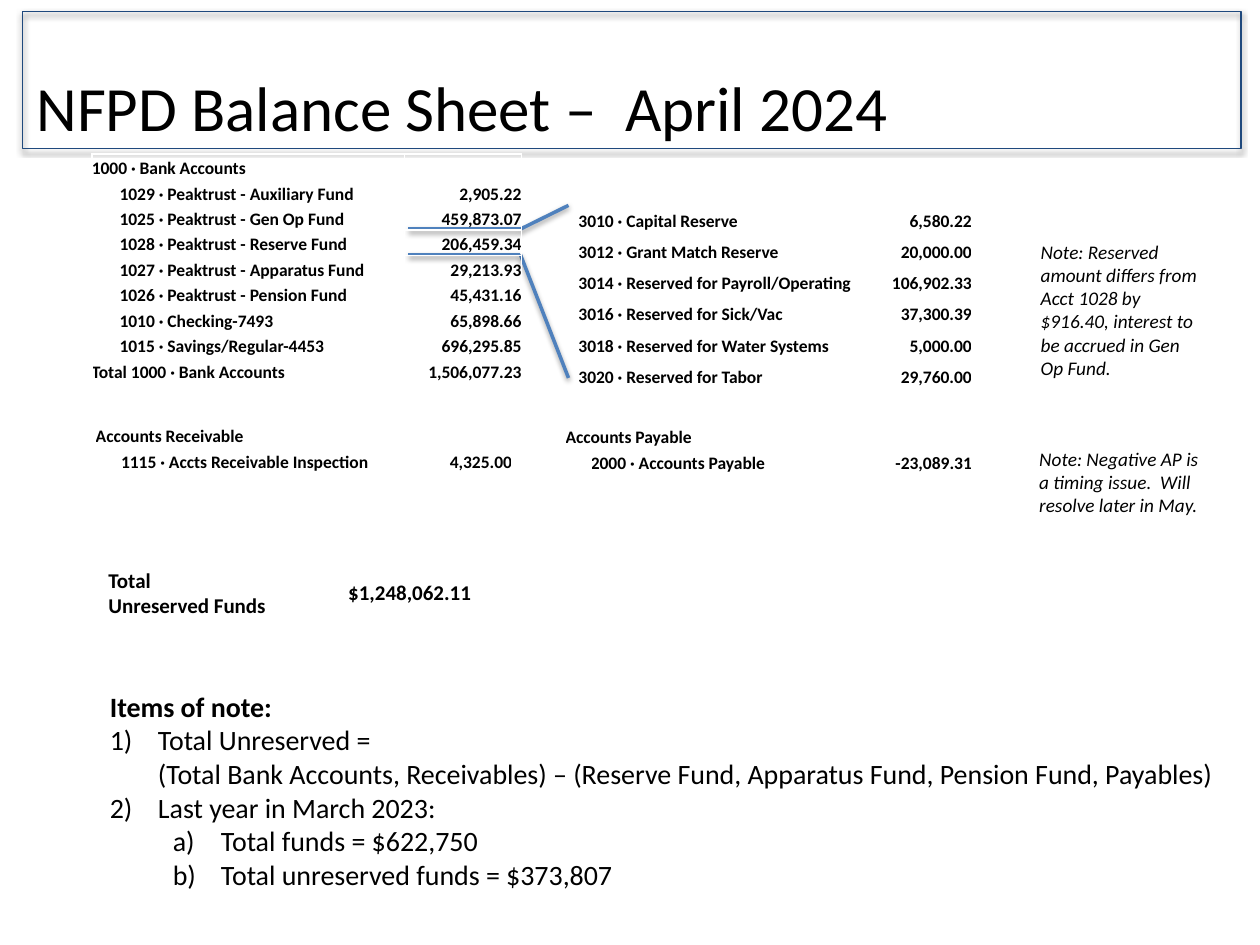
from dataclasses import dataclass

from lxml.etree import SubElement
from pptx import Presentation
from pptx.dml.color import RGBColor
from pptx.enum.shapes import MSO_CONNECTOR as Connector, MSO_SHAPE as Shape
from pptx.enum.text import MSO_ANCHOR as Anchor, MSO_AUTO_SIZE as AutoSize, PP_ALIGN as Align
from pptx.oxml.ns import qn
from pptx.util import Cm, Pt


@dataclass(frozen=True)
class Theme:
    """Colours, typeface and type sizes of the slide."""
    font: str = "Calibri"
    ink: str = "000000"
    frame: str = "1F497D"
    callout: str = "4F81BD"
    grid: str = "FFFFFF"
    title: int = 36
    items: int = 16
    total: int = 12
    note: int = 11
    ledger: int = 10


@dataclass(frozen=True)
class Box:
    """A region of the slide, in centimetres."""
    left: float
    top: float
    width: float
    height: float

    def place(self):
        """Return left, top, width and height as lengths."""
        return Cm(self.left), Cm(self.top), Cm(self.width), Cm(self.height)


THEME = Theme()

BANK_ACCOUNTS = [
    ("1000 · Bank Accounts", "", ""),
    ("", "1029 · Peaktrust - Auxiliary Fund", "2,905.22"),
    ("", "1025 · Peaktrust - Gen Op Fund", "459,873.07"),
    ("", "1028 · Peaktrust - Reserve Fund", "206,459.34"),
    ("", "1027 · Peaktrust - Apparatus Fund", "29,213.93"),
    ("", "1026 · Peaktrust - Pension Fund", "45,431.16"),
    ("", "1010 · Checking-7493", "65,898.66"),
    ("", "1015 · Savings/Regular-4453", "696,295.85"),
    ("Total 1000 · Bank Accounts", "", "1,506,077.23"),
]
RESERVES = [
    ("3010 · Capital Reserve", "6,580.22"),
    ("3012 · Grant Match Reserve", "20,000.00"),
    ("3014 · Reserved for Payroll/Operating", "106,902.33"),
    ("3016 · Reserved for Sick/Vac", "37,300.39"),
    ("3018 · Reserved for Water Systems", "5,000.00"),
    ("3020 · Reserved for Tabor", "29,760.00"),
]
RECEIVABLES = [
    ("Accounts Receivable", "", ""),
    ("", "1115 · Accts Receivable Inspection", "4,325.00"),
]
PAYABLES = [
    ("Accounts Payable", "", ""),
    ("", "2000 · Accounts Payable", "-23,089.31"),
]
UNRESERVED = [("Total \nUnreserved Funds", "$1,248,062.11")]
ITEMS = [
    (0, "Total Unreserved = \n(Total Bank Accounts, Receivables) – "
        "(Reserve Fund, Apparatus Fund, Pension Fund, Payables)"),
    (0, "Last year in March 2023:"),
    (1, "Total funds = $622,750"),
    (1, "Total unreserved funds = $373,807"),
]
NUMBERING = [("arabicParenR", 0.97), ("alphaLcParenR", 2.24)]


def write(paragraph, text, size, bold=False, italic=False):
    """Add text run by run, with a line break at each newline."""
    for index, line in enumerate(text.split("\n")):
        if index:
            paragraph.add_line_break()
        run = paragraph.add_run()
        run.text = line
        font = run.font
        font.name, font.size, font.bold, font.italic = THEME.font, Pt(size), bold, italic
        font.color.rgb = RGBColor.from_string(THEME.ink)


def outline(part, color, width, distance, opacity):
    """Give a part its line and a soft shadow straight below it."""
    part.line.color.rgb = RGBColor.from_string(color)
    part.line.width = Pt(width)
    effects = SubElement(part._element.spPr, qn("a:effectLst"))
    shadow = SubElement(effects, qn("a:outerShdw"), blurRad=str(Pt(3.1)),
                        dist=str(Pt(distance)), dir="5400000", rotWithShape="0")
    shade = SubElement(shadow, qn("a:srgbClr"), val=THEME.ink)
    SubElement(shade, qn("a:alpha"), val=str(opacity * 1000))


def heading(slide, box):
    """Draw the framed heading with the slide title at its foot."""
    frame = slide.shapes.add_shape(Shape.RECTANGLE, *box.place())
    frame.fill.background()
    outline(frame, THEME.frame, 0.75, 1.8, 100)
    title = slide.shapes.title
    title.left, title.top, title.width, title.height = Box(
        box.left + 0.02, box.top + 1.09, 22.86, 1.65).place()
    title.text_frame.vertical_anchor = Anchor.MIDDLE
    paragraph = title.text_frame.paragraphs[0]
    paragraph.alignment = Align.LEFT
    write(paragraph, "NFPD Balance Sheet –  April 2024", THEME.title)


def border(cell, bottom):
    """Draw the cell borders in the grid colour."""
    properties = cell._tc.get_or_add_tcPr()
    for side, width in (("L", 1), ("R", 1), ("T", 1), ("B", bottom)):
        edge = SubElement(properties, qn(f"a:ln{side}"), w=str(Pt(width)))
        fill = SubElement(edge, qn("a:solidFill"))
        SubElement(fill, qn("a:srgbClr"), val=THEME.grid)


def ledger(slide, box, columns, rows, size=THEME.ledger, anchor=Anchor.BOTTOM,
           padded=False, bottom=1):
    """Set out accounts and right-aligned amounts as a table."""
    table = slide.shapes.add_table(len(rows), len(columns), *box.place()).table
    table.first_row = table.horz_banding = False
    for column, width in zip(table.columns, columns):
        column.width = Cm(width)
    for r, entries in enumerate(rows):
        table.rows[r].height = Cm(box.height / len(rows))
        for c, entry in enumerate(entries):
            cell = table.cell(r, c)
            border(cell, bottom)
            cell.fill.background()
            cell.vertical_anchor = anchor
            if not padded:
                cell.margin_left = cell.margin_right = cell.margin_top = cell.margin_bottom = 0
            paragraph = cell.text_frame.paragraphs[0]
            if entry:
                write(paragraph, entry, size, bold=True)
            else:
                SubElement(paragraph._p, qn("a:endParaRPr"), sz=str(size * 100))
            if c == len(columns) - 1:
                paragraph.alignment = Align.RIGHT
        if len(columns) == 3 and entries[0]:
            table.cell(r, 0).merge(table.cell(r, 1))


def reserve_callout(slide, box):
    """Link the reserve fund amount to the list of its parts."""
    elbow, upper, lower = 2.26, 0.48, 0.99
    group = slide.shapes.add_group_shape()
    for x1, y1, x2, y2 in ((elbow, upper, box.width, 0),
                           (elbow, lower, box.width, box.height),
                           (0, upper, elbow, upper),
                           (0, lower, elbow, lower)):
        link = group.shapes.add_connector(
            Connector.STRAIGHT, Cm(box.left + x1), Cm(box.top + y1),
            Cm(box.left + x2), Cm(box.top + y2))
        outline(link, THEME.callout, 2, 1.6, 38)


def side_note(slide, box, text):
    """Write an italic remark beside the ledgers."""
    frame = slide.shapes.add_textbox(*box.place()).text_frame
    frame.word_wrap = True
    frame.auto_size = AutoSize.SHAPE_TO_FIT_TEXT
    write(frame.paragraphs[0], text, THEME.note, italic=True)


def items_of_note(slide, box):
    """Fill the body placeholder with the numbered items of note."""
    body = slide.placeholders[1]
    body.left, body.top, body.width, body.height = box.place()
    frame = body.text_frame
    frame.auto_size = AutoSize.SHAPE_TO_FIT_TEXT
    lead = frame.paragraphs[0]
    lead.space_before = Pt(0)
    properties = lead._p.get_or_add_pPr()
    properties.set("marL", "0")
    properties.set("indent", "0")
    SubElement(properties, qn("a:buNone"))
    write(lead, "Items of note:", THEME.items, bold=True)
    for level, text in ITEMS:
        scheme, indent = NUMBERING[level]
        item = frame.add_paragraph()
        item.level = level
        item.space_before = Pt(0)
        properties = item._p.get_or_add_pPr()
        properties.set("marL", str(Cm(indent)))
        properties.set("indent", str(-Cm(0.97)))
        SubElement(properties, qn("a:buFont"), typeface=THEME.font)
        SubElement(properties, qn("a:buAutoNum"), type=scheme)
        write(item, text, THEME.items)


def main():
    """Build the balance sheet slide and save it."""
    deck = Presentation()
    deck.slide_width, deck.slide_height = Cm(25.4), Cm(19.05)
    slide = deck.slides.add_slide(deck.slide_layouts[1])
    heading(slide, Box(0.46, 0.23, 24.56, 2.77))
    ledger(slide, Box(11.4, 8.51, 8.19, 1.04), (0.51, 5.44, 2.24), PAYABLES)
    ledger(slide, Box(11.66, 4.06, 7.93, 3.76), (5.77, 2.16), RESERVES)
    items_of_note(slide, Box(1.96, 13.77, 23.04, 4.37))
    side_note(slide, Box(20.73, 4.72, 3.81, 3.07),
              "Note: Reserved amount differs from Acct 1028 by $916.40, "
              "interest to be accrued in Gen Op Fund.")
    ledger(slide, Box(1.93, 11.33, 7.82, 1.27), (3.91, 3.91), UNRESERVED,
           THEME.total, Anchor.MIDDLE, padded=True, bottom=3)
    reserve_callout(slide, Box(8.23, 4.14, 3.23, 3.48))
    ledger(slide, Box(1.85, 3.1, 8.66, 4.62), (0.56, 5.74, 2.36), BANK_ACCOUNTS)
    ledger(slide, Box(1.93, 8.51, 8.39, 1.02), (0.51, 5.72, 2.16), RECEIVABLES)
    side_note(slide, Box(20.7, 8.89, 3.81, 1.68),
              "Note: Negative AP is a timing issue.  Will resolve later in May.")
    deck.save("out.pptx")


if __name__ == "__main__":
    main()
